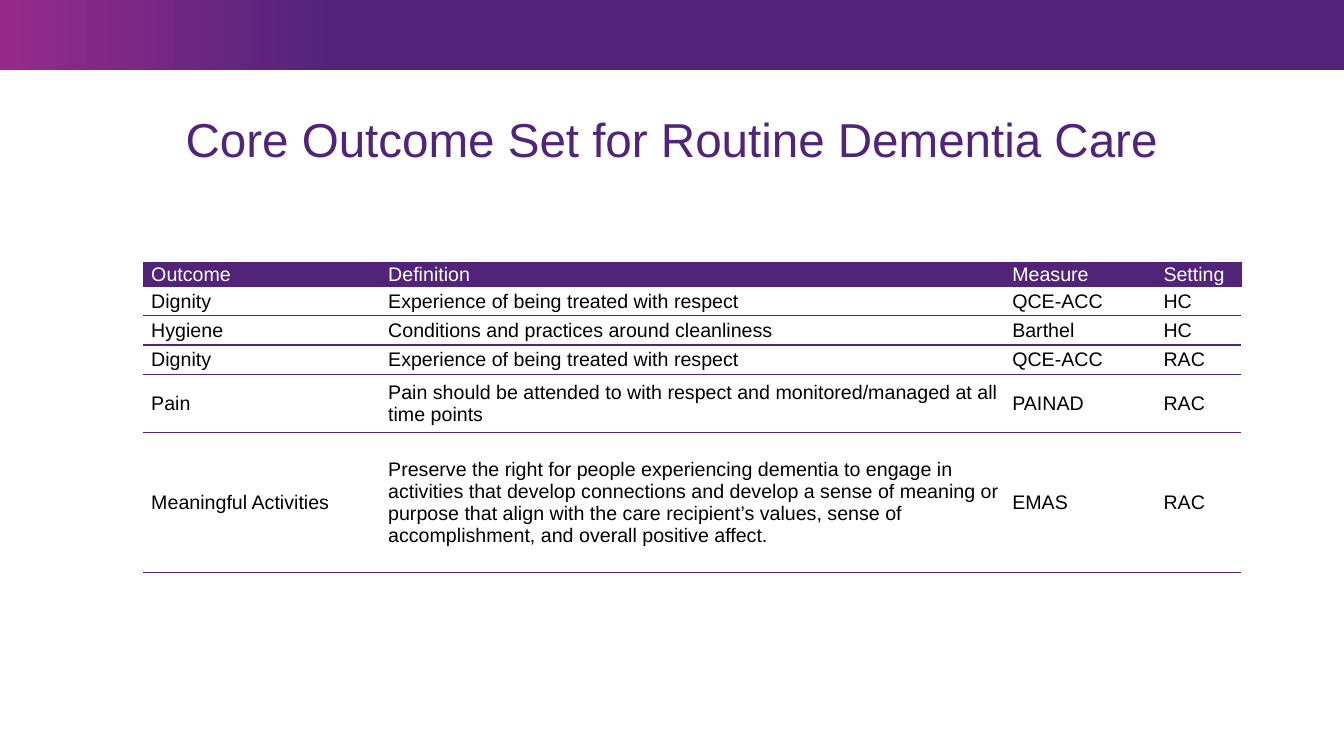
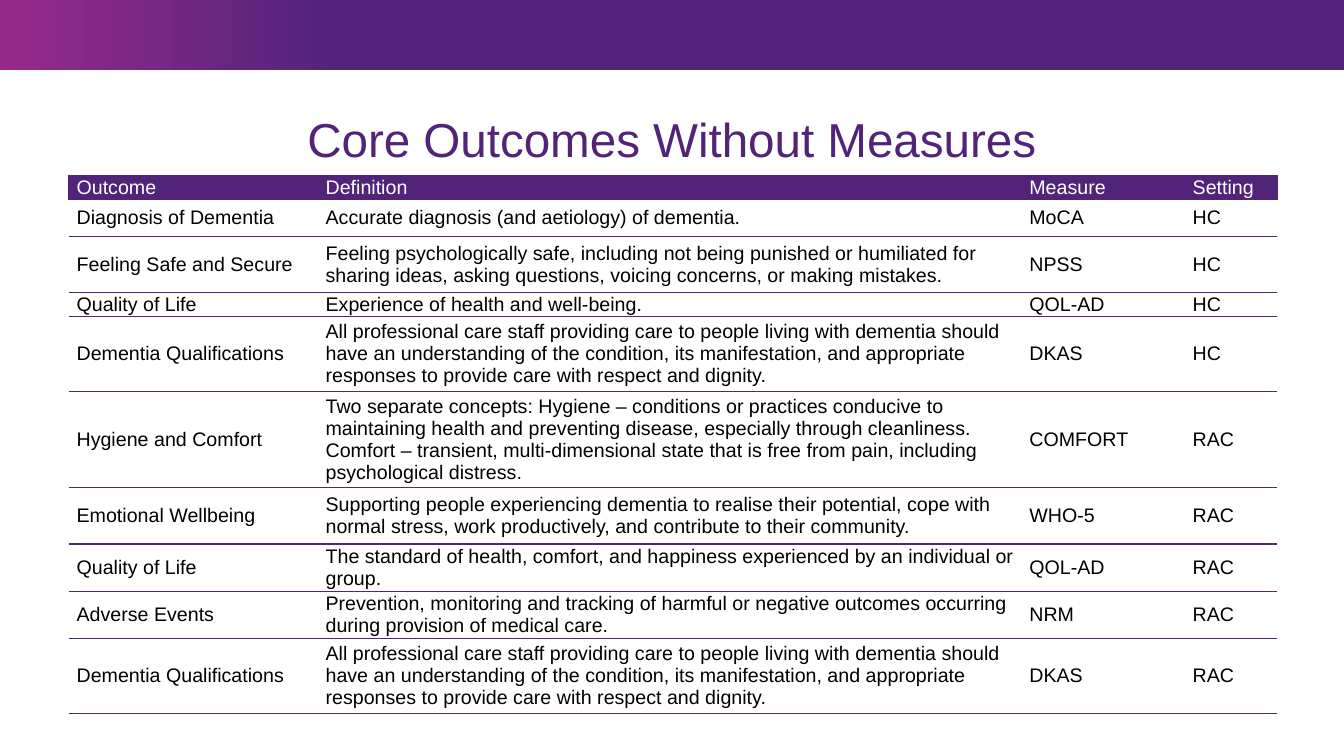
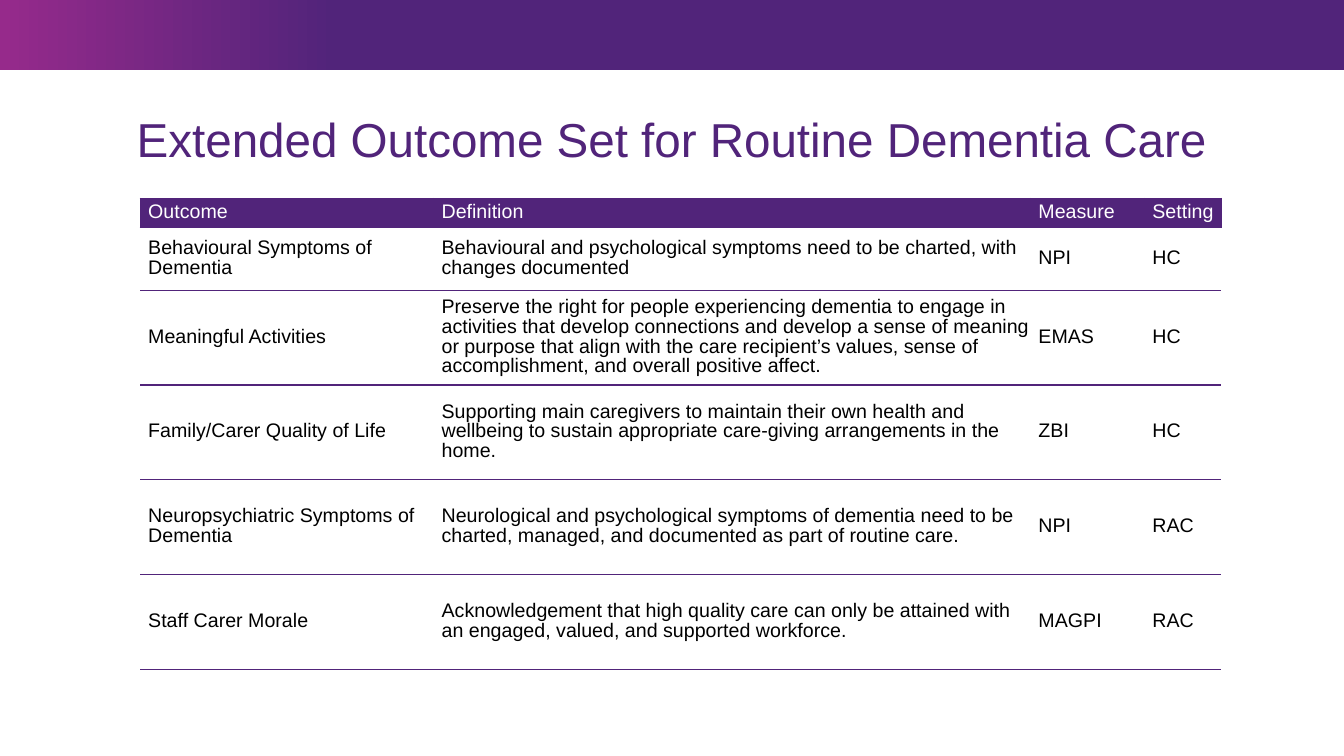
from lxml import etree
from pptx import Presentation
from pptx.dml.color import RGBColor
from pptx.enum.shapes import MSO_SHAPE
from pptx.enum.text import MSO_ANCHOR, PP_ALIGN
from pptx.oxml.ns import qn
from pptx.util import Inches, Pt

RECTANGLE = MSO_SHAPE.RECTANGLE
MIDDLE = MSO_ANCHOR.MIDDLE
CENTER = PP_ALIGN.CENTER
LEFT = PP_ALIGN.LEFT

PURPLE = RGBColor(0x51, 0x24, 0x7A)
MAGENTA = RGBColor(0x96, 0x2A, 0x8B)
WHITE = RGBColor(0xFF, 0xFF, 0xFF)
BLACK = RGBColor(0x00, 0x00, 0x00)

FONT = "Arial"
PLAIN_TABLE_STYLE = "{2D5ABB26-0587-4C30-8999-92F81FD0307C}"
HEADINGS = ("Outcome", "Definition", "Measure", "Setting")

DIGNITY = "Experience of being treated with respect"
ACTIVITIES = (
    "Preserve the right for people experiencing dementia to engage in activities "
    "that develop connections and develop a sense of meaning or purpose that align "
    "with the care recipient’s values, sense of accomplishment, and overall "
    "positive affect."
)
QUALIFICATIONS = (
    "All professional care staff providing care to people living with dementia "
    "should have an understanding of the condition, its manifestation, and "
    "appropriate responses to provide care with respect and dignity."
)

CORE_ROWS = [
    ("Dignity", DIGNITY, "QCE-ACC", "HC"),
    ("Hygiene", "Conditions and practices around cleanliness", "Barthel", "HC"),
    ("Dignity", DIGNITY, "QCE-ACC", "RAC"),
    ("Pain",
     "Pain should be attended to with respect and monitored/managed at all time points",
     "PAINAD", "RAC"),
    ("Meaningful Activities", ACTIVITIES, "EMAS", "RAC"),
]

UNMEASURED_ROWS = [
    ("Diagnosis of Dementia", "Accurate diagnosis (and aetiology) of dementia.",
     "MoCA", "HC"),
    ("Feeling Safe and Secure",
     "Feeling psychologically safe, including not being punished or humiliated for "
     "sharing ideas, asking questions, voicing concerns, or making mistakes.",
     "NPSS", "HC"),
    ("Quality of Life", "Experience of health and well-being.", "QOL-AD", "HC"),
    ("Dementia Qualifications", QUALIFICATIONS, "DKAS", "HC"),
    ("Hygiene and Comfort",
     "Two separate concepts: Hygiene – conditions or practices conducive to "
     "maintaining health and preventing disease, especially through cleanliness. "
     "Comfort – transient, multi-dimensional state that is free from pain, "
     "including psychological distress.",
     "COMFORT", "RAC"),
    ("Emotional Wellbeing",
     "Supporting people experiencing dementia to realise their potential, cope with "
     "normal stress, work productively, and contribute to their community.",
     "WHO-5", "RAC"),
    ("Quality of Life",
     "The standard of health, comfort, and happiness experienced by an individual "
     "or group.",
     "QOL-AD", "RAC"),
    ("Adverse Events",
     "Prevention, monitoring and tracking of harmful or negative outcomes occurring "
     "during provision of medical care.",
     "NRM", "RAC"),
    ("Dementia Qualifications", QUALIFICATIONS, "DKAS", "RAC"),
]

EXTENDED_ROWS = [
    ("Behavioural Symptoms of Dementia",
     "Behavioural and psychological symptoms need to be charted, with changes "
     "documented",
     "NPI", "HC"),
    ("Meaningful Activities", ACTIVITIES, "EMAS", "HC"),
    ("Family/Carer Quality of Life",
     "Supporting main caregivers to maintain their own health and wellbeing to "
     "sustain appropriate care-giving arrangements in the home.",
     "ZBI", "HC"),
    ("Neuropsychiatric Symptoms of Dementia",
     "Neurological and psychological symptoms of dementia need to be charted, "
     "managed, and documented as part of routine care.",
     "NPI", "RAC"),
    ("Staff Carer Morale",
     "Acknowledgement that high quality care can only be attained with an engaged, "
     "valued, and supported workforce.",
     "MAGPI", "RAC"),
]


class OutcomeDeck:
    def __init__(self):
        self.deck = Presentation()
        self.deck.slide_width = Inches(13.33)
        self.deck.slide_height = Inches(7.5)
        self.page = None

    def add_page(self, title):
        self.page = self.deck.slides.add_slide(self.deck.slide_layouts[6])
        self.add_band()
        self.add_title(title)

    def add_band(self):
        band = self.page.shapes.add_shape(
            RECTANGLE, 0, 0, self.deck.slide_width, Inches(0.69))
        band.shadow.inherit = False
        band.line.fill.background()
        band.fill.gradient()
        band.fill.gradient_angle = 0
        stops = band.fill.gradient_stops
        for stop, position, color in zip(stops, (0, 0.25), (MAGENTA, PURPLE)):
            stop.position = position
            stop.color.rgb = color

    def add_title(self, text):
        box = self.page.shapes.add_textbox(
            Inches(0.76), Inches(1.15), Inches(11.81), Inches(0.51))
        frame = box.text_frame
        frame.word_wrap = True
        frame.vertical_anchor = MIDDLE
        frame.margin_left = frame.margin_right = 0
        frame.margin_top = frame.margin_bottom = 0
        para = frame.paragraphs[0]
        para.line_spacing = 0.9
        self.set_text(para, text, 34, PURPLE, CENTER)

    def add_table(self, left, top, widths, heights, rows, line_spacing=None):
        frame = self.page.shapes.add_table(
            len(heights), len(widths), Inches(left), Inches(top),
            Inches(sum(widths)), Inches(sum(heights)))
        table = frame.table
        table.first_row = table.horz_banding = False
        table._tbl.tblPr.find(qn("a:tableStyleId")).text = PLAIN_TABLE_STYLE
        for column, width in zip(table.columns, widths):
            column.width = Inches(width)
        for row, height in zip(table.rows, heights):
            row.height = Inches(height)
        for row_index, values in enumerate([HEADINGS, *rows]):
            for column_index, text in enumerate(values):
                cell = table.cell(row_index, column_index)
                self.fill_cell(cell, text, row_index == 0, line_spacing)

    def fill_cell(self, cell, text, is_heading, line_spacing):
        cell.margin_left = Inches(0.08)
        cell.margin_right = cell.margin_top = cell.margin_bottom = 0
        cell.vertical_anchor = MIDDLE
        self.add_borders(cell, "LRTB" if is_heading else "B")
        if is_heading:
            cell.fill.solid()
            cell.fill.fore_color.rgb = PURPLE
        else:
            cell.fill.background()
        para = cell.text_frame.paragraphs[0]
        if line_spacing:
            para.line_spacing = line_spacing
        self.set_text(para, text, 14, WHITE if is_heading else BLACK, LEFT)

    def add_borders(self, cell, sides):
        properties = cell._tc.get_or_add_tcPr()
        for side in sides:
            border = etree.SubElement(properties, qn(f"a:ln{side}"), w=str(Pt(1)))
            fill = etree.SubElement(border, qn("a:solidFill"))
            etree.SubElement(fill, qn("a:srgbClr"), val=str(PURPLE))

    def set_text(self, para, text, size, color, alignment):
        para.text = text
        para.alignment = alignment
        para.font.name = FONT
        para.font.size = Pt(size)
        para.font.color.rgb = color


def main():
    outcomes = OutcomeDeck()

    outcomes.add_page("Core Outcome Set for Routine Dementia Care")
    outcomes.add_table(
        1.42, 2.61, (2.35, 6.19, 1.5, 0.85),
        (0.22, 0.29, 0.29, 0.29, 0.58, 1.39), CORE_ROWS)

    outcomes.add_page("Core Outcomes Without Measures")
    outcomes.add_table(
        0.68, 1.74, (2.47, 6.98, 1.62, 0.92),
        (0.22, 0.37, 0.56, 0.22, 0.75, 0.95, 0.56, 0.44, 0.44, 0.75),
        UNMEASURED_ROWS)

    outcomes.add_page("Extended Outcome Set for Routine Dementia Care")
    outcomes.add_table(
        1.39, 1.97, (2.91, 5.92, 1.13, 0.76),
        (0.29, 0.62, 0.94, 0.94, 0.94, 0.94), EXTENDED_ROWS, Pt(14))

    outcomes.deck.save("out.pptx")


if __name__ == "__main__":
    main()
